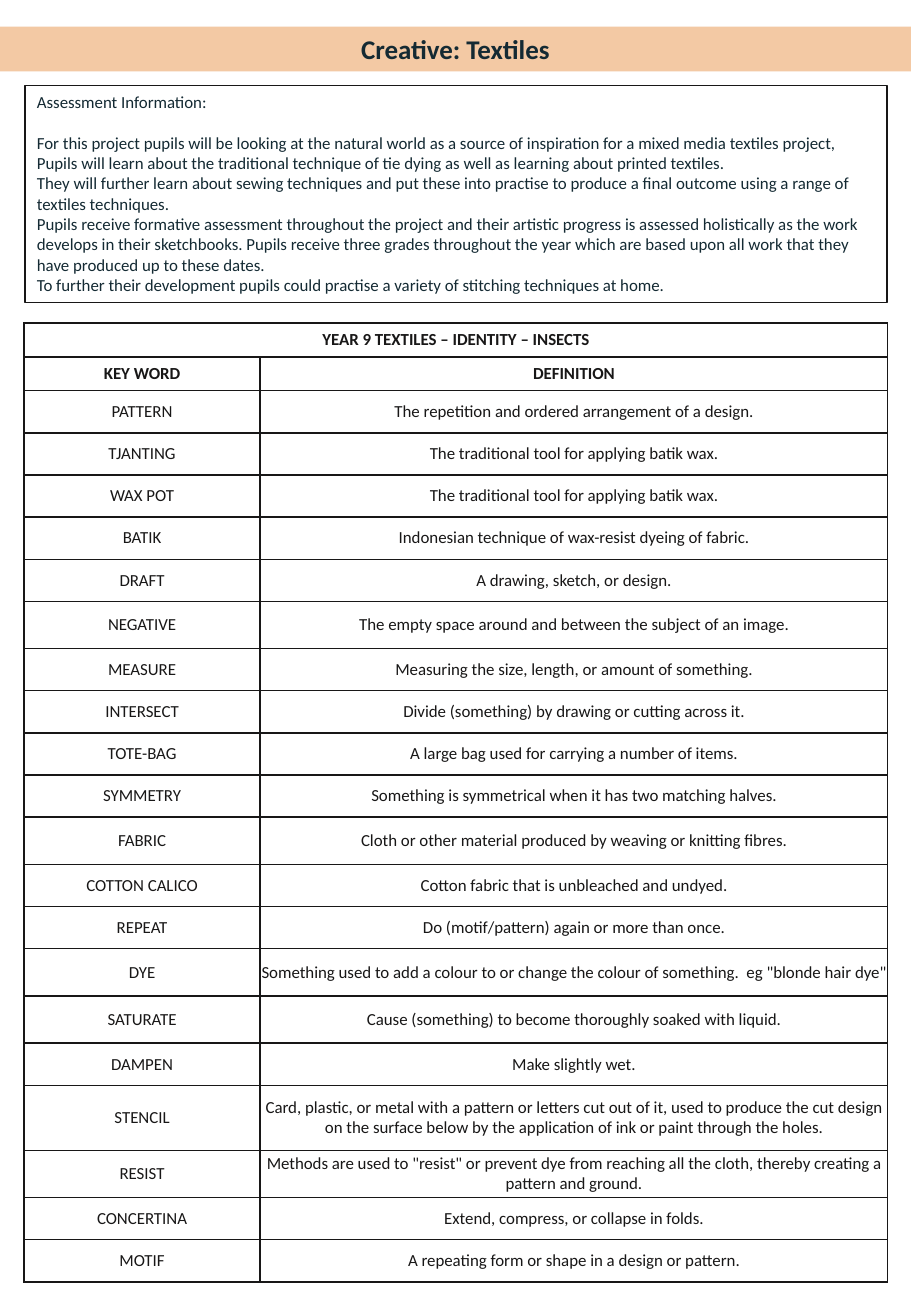
"""Build the Year 9 textiles project sheet with its key word table."""
from lxml.etree import SubElement
from pptx import Presentation
from pptx.dml.color import RGBColor
from pptx.enum.shapes import MSO_SHAPE as SHAPE
from pptx.enum.text import MSO_ANCHOR as ANCHOR, PP_ALIGN as ALIGN
from pptx.oxml.ns import qn
from pptx.util import Pt

COLORS = {"band": "F3C9A4", "navy": "142A33", "ink": "181717"}
FONT = "Calibri"
HEADER_H, ROW_H = 20, 25
TALL_ROWS = {"NEGATIVE": 28, "FABRIC": 28, "DYE": 28, "SATURATE": 28,
             "STENCIL": 38.5, "RESIST": 28}

ASSESSMENT = [
    "Assessment Information:",
    "For this project pupils will be looking at the natural world as a source of "
    "inspiration for a mixed media textiles project, Pupils will learn about the "
    "traditional technique of tie dying as well as learning about printed textiles.",
    "They will further learn about sewing techniques and put these into practise to "
    "produce a final outcome using a range of textiles techniques.",
    "Pupils receive formative assessment throughout the project and their artistic "
    "progress is assessed holistically as the work develops in their sketchbooks. "
    "Pupils receive three grades throughout the year which are based upon all work "
    "that they have produced up to these dates.",
    "To further their development pupils could practise a variety of stitching "
    "techniques at home.",
]

KEY_WORDS = [
    ("PATTERN", "The repetition and ordered arrangement of a design."),
    ("TJANTING", "The traditional tool for applying batik wax."),
    ("WAX POT", "The traditional tool for applying batik wax."),
    ("BATIK", "Indonesian technique of wax-resist dyeing of fabric."),
    ("DRAFT", "A drawing, sketch, or design."),
    ("NEGATIVE", "The empty space around and between the subject of an image."),
    ("MEASURE", "Measuring the size, length, or amount of something."),
    ("INTERSECT", "Divide (something) by drawing or cutting across it."),
    ("TOTE-BAG", "A large bag used for carrying a number of items."),
    ("SYMMETRY", "Something is symmetrical when it has two matching halves."),
    ("FABRIC", "Cloth or other material produced by weaving or knitting fibres."),
    ("COTTON CALICO", "Cotton fabric that is unbleached and undyed."),
    ("REPEAT", "Do (motif/pattern) again or more than once."),
    ("DYE", "Something used to add a colour to or change the colour of something. "
            " eg \"blonde hair dye\""),
    ("SATURATE", "Cause (something) to become thoroughly soaked with liquid."),
    ("DAMPEN", "Make slightly wet."),
    ("STENCIL", "Card, plastic, or metal with a pattern or letters cut out of it, used "
                "to produce the cut design on the surface below by the application of "
                "ink or paint through the holes."),
    ("RESIST", "Methods are used to \"resist\" or prevent dye from reaching all the "
               "cloth, thereby creating a pattern and ground."),
    ("CONCERTINA", "Extend, compress, or collapse in folds."),
    ("MOTIF", "A repeating form or shape in a design or pattern."),
]


def rgb(name):
    return RGBColor.from_string(COLORS[name])


def add_text(p, text, color, size=10, bold=False, align=ALIGN.CENTER):
    p.alignment = align
    r = p.add_run()
    r.text = text
    r.font.name, r.font.size, r.font.bold = FONT, Pt(size), bold
    r.font.color.rgb = rgb(color)


def add_box(s, left, top, width, height, fill=None, line=None):
    sp = s.shapes.add_shape(SHAPE.RECTANGLE, Pt(left), Pt(top), Pt(width), Pt(height))
    sp.shadow.inherit = False
    if fill:
        sp.fill.solid()
        sp.fill.fore_color.rgb = rgb(fill)
    else:
        sp.fill.background()
    if line:
        sp.line.color.rgb = rgb(line)
        sp.line.width = Pt(0.75)
    else:
        sp.line.fill.background()
    tf = sp.text_frame
    tf.word_wrap = True
    tf.vertical_anchor = ANCHOR.TOP
    return tf


def add_title(s, text):
    tf = add_box(s, 0, 15.8, 540, 26.6, fill="band")
    add_text(tf.paragraphs[0], text, "navy", size=16, bold=True)


def add_assessment(s, paragraphs):
    tf = add_box(s, 14.8, 50.8, 511, 128.4, line="ink")
    for i, text in enumerate(paragraphs):
        p = tf.add_paragraph() if i else tf.paragraphs[0]
        add_text(p, text, "navy", align=ALIGN.LEFT)
    tf.paragraphs[0].space_after = Pt(12.2)


def set_borders(cell):
    tc_pr = cell._tc.get_or_add_tcPr()
    for i, side in enumerate(("a:lnL", "a:lnR", "a:lnT", "a:lnB")):
        ln = tc_pr.makeelement(qn(side), {"w": str(Pt(1))})
        fill = SubElement(ln, qn("a:solidFill"))
        SubElement(fill, qn("a:srgbClr"), val=COLORS["ink"])
        tc_pr.insert(i, ln)


def fill_cell(cell, text, bold):
    cell.margin_left = cell.margin_right = cell.margin_top = cell.margin_bottom = 0
    cell.vertical_anchor = ANCHOR.MIDDLE
    cell.fill.background()
    set_borders(cell)
    add_text(cell.text_frame.paragraphs[0], text, "ink", bold=bold)


def add_key_words(s, heading, columns, entries):
    rows = [(heading, ""), columns, *entries]
    heights = [HEADER_H] * 2 + [TALL_ROWS.get(word, ROW_H) for word, _ in entries]
    widths = (140, 372)
    table = s.shapes.add_table(len(rows), len(widths), Pt(14.2), Pt(191.5),
                               Pt(sum(widths)), Pt(sum(heights))).table
    table.first_row = table.horz_banding = False
    for col, width in zip(table.columns, widths):
        col.width = Pt(width)
    table.cell(0, 0).merge(table.cell(0, 1))
    for i, (texts, height) in enumerate(zip(rows, heights)):
        table.rows[i].height = Pt(height)
        for j, text in enumerate(texts):
            fill_cell(table.cell(i, j), text, bold=i < 2)


def main():
    prs = Presentation()
    prs.slide_width, prs.slide_height = Pt(540), Pt(779.76)
    s = prs.slides.add_slide(prs.slide_layouts[6])
    add_title(s, "Creative: Textiles")
    add_assessment(s, ASSESSMENT)
    add_key_words(s, "YEAR 9 TEXTILES – IDENTITY – INSECTS",
                  ("KEY WORD", "DEFINITION"), KEY_WORDS)
    prs.save("out.pptx")


if __name__ == "__main__":
    main()
